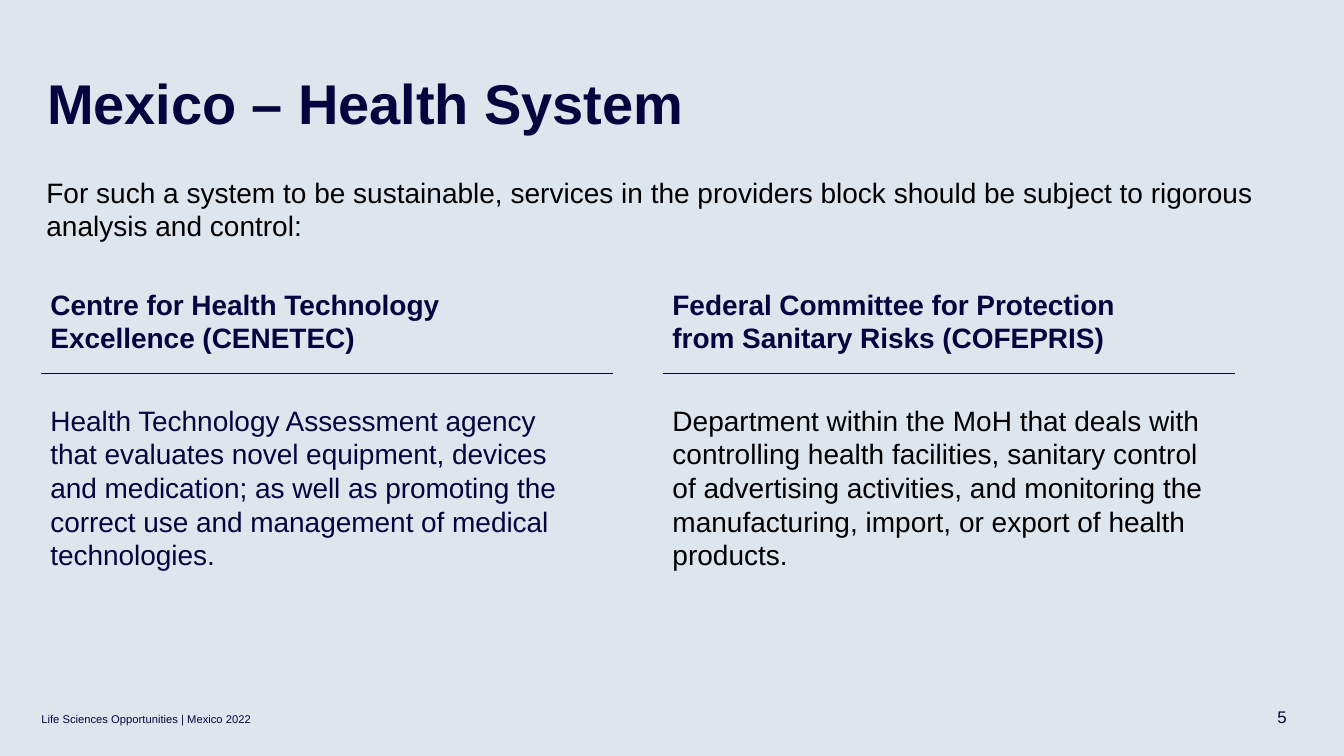
from dataclasses import dataclass

from lxml import etree
from pptx import Presentation
from pptx.dml.color import RGBColor
from pptx.enum.shapes import MSO_CONNECTOR, MSO_SHAPE
from pptx.oxml.ns import qn
from pptx.util import Inches, Pt

STRAIGHT = MSO_CONNECTOR.STRAIGHT
RECTANGLE = MSO_SHAPE.RECTANGLE


@dataclass(frozen=True)
class Theme:
    font: str = "Arial"
    background: RGBColor = RGBColor(0xDD, 0xE5, 0xED)
    navy: RGBColor = RGBColor(0x04, 0x04, 0x3F)
    footer: RGBColor = RGBColor(0x05, 0x05, 0x40)
    black: RGBColor = RGBColor(0, 0, 0)
    title_size: int = 40
    body_size: int = 20
    page_size: int = 12
    footer_size: int = 8
    tight: int = -5  # letter spacing, hundredths of a point


THEME = Theme()

# Content
TITLE = "Mexico – Health System"
INTRO = ("For such a system to be sustainable, services in the providers block "
         "should be subject to rigorous analysis and control:")
AGENCIES = [
    ("Centre for Health Technology Excellence (CENETEC)",
     "Health Technology Assessment agency that evaluates novel equipment, "
     "devices and medication; as well as promoting the correct use and "
     "management of medical technologies.",
     THEME.navy, THEME.tight),
    ("Federal Committee for Protection from Sanitary Risks (COFEPRIS)",
     "Department within the MoH that deals with controlling health facilities, "
     "sanitary control of advertising activities, and monitoring the "
     "manufacturing, import, or export of health products.",
     THEME.black, 0),
]
FOOTER = "Life Sciences Opportunities | Mexico 2022"
PAGE_NUMBER = "5"

# Column layout, in inches
COLUMN_LEFT, COLUMN_STEP = 0.41, 6.17
RULE_TOP, RULE_WIDTH = 3.7, 5.67
TEXT_INDENT = 0.08


def add_text(slide, text, box, size, color, bold=False, indent=0.01,
             top=0.01, before=1, spacing=0):
    shape = slide.shapes.add_textbox(*map(Inches, box))
    frame = shape.text_frame
    frame.word_wrap = True
    frame.margin_left, frame.margin_top = Inches(indent), Inches(top)
    frame.margin_right = frame.margin_bottom = 0
    frame.text = text
    paragraph = frame.paragraphs[0]
    paragraph.space_before = Pt(before)
    run = paragraph.runs[0]
    font = run.font
    font.name, font.size, font.bold = THEME.font, Pt(size), bold
    font.color.rgb = color
    if spacing:
        run._r.get_or_add_rPr().set("spc", str(spacing))
    return paragraph


def add_rule(slide, left):
    rule = slide.shapes.add_connector(
        STRAIGHT, Inches(left), Inches(RULE_TOP),
        Inches(left + RULE_WIDTH), Inches(RULE_TOP))
    rule.line.color.rgb = THEME.navy
    rule.line.width = Pt(0.5)
    etree.SubElement(rule._element.spPr, qn("a:effectLst"))


def main():
    presentation = Presentation()
    presentation.slide_width = Inches(13.33)
    presentation.slide_height = Inches(7.5)
    slide = presentation.slides.add_slide(presentation.slide_layouts[6])

    # Background panel
    panel = slide.shapes.add_shape(RECTANGLE, 0, 0, presentation.slide_width,
                                   presentation.slide_height)
    panel.shadow.inherit = False
    panel.fill.solid()
    panel.fill.fore_color.rgb = THEME.background
    panel.line.fill.background()

    # Title and introduction
    add_text(slide, TITLE, (0.46, 0.67, 9.4, 0.69), THEME.title_size,
             THEME.navy, bold=True, spacing=THEME.tight)
    add_text(slide, INTRO, (0.46, 1.73, 12.38, 0.69),
             THEME.body_size, THEME.black, indent=0, before=0)

    # One column per agency
    for index, (name, description, color, spacing) in enumerate(AGENCIES):
        left = COLUMN_LEFT + index * COLUMN_STEP
        text_left = left + TEXT_INDENT
        add_text(slide, name, (text_left, 2.84, 4.67, 0.69), THEME.body_size,
                 THEME.navy, bold=True, spacing=THEME.tight)
        add_rule(slide, left)
        add_text(slide, description, (text_left, 3.99, 5.34, 1.7),
                 THEME.body_size, color, spacing=spacing)

    # Footer and page number
    add_text(slide, FOOTER, (0.4, 7.07, 2.88, 0.14),
             THEME.footer_size, THEME.footer, top=0, before=0.2)
    page = add_text(slide, PAGE_NUMBER, (12.63, 7.01, 0.28, 0.21),
                    THEME.page_size, THEME.navy, indent=0.04, top=0, before=0)
    page.line_spacing = Pt(14.2)

    presentation.save("out.pptx")


if __name__ == "__main__":
    main()
